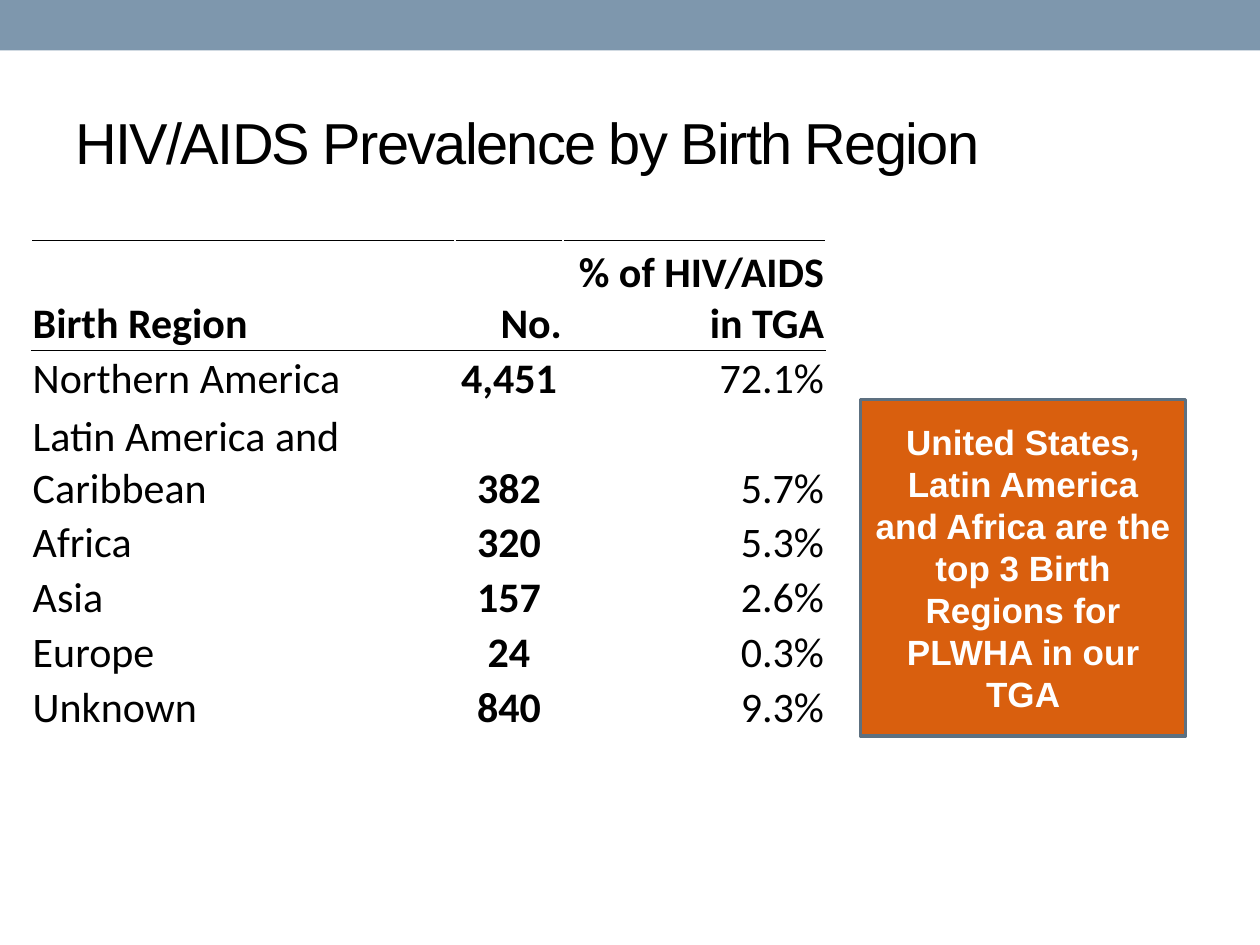
from dataclasses import dataclass

from lxml.etree import SubElement
from pptx import Presentation
from pptx.dml.color import RGBColor
from pptx.enum.shapes import MSO_SHAPE as Shape
from pptx.enum.text import MSO_ANCHOR as Anchor, MSO_AUTO_SIZE as AutoSize, PP_ALIGN as Align
from pptx.oxml.ns import qn
from pptx.util import Inches, Pt

COLORS = {"band": "7E97AD", "text": "000000", "callout": "D95F0E",
          "callout_line": "5D7080", "callout_text": "FFFFFF"}
COL_WIDTHS = (3.36, 0.86, 2.08)
LINE_HEIGHT = 0.435
SPACER_HEIGHT = 0.33


@dataclass
class Row:
    region: str
    count: str
    share: str
    lines: int = 1
    header: bool = False


ROWS = [
    Row("Birth Region", "No.", "% of HIV/AIDS in TGA", 2, True),
    Row("Northern America", "4,451", "72.1%"),
    Row("Latin America and Caribbean", "382", "5.7%", 2),
    Row("Africa", "320", "5.3%"),
    Row("Asia", "157", "2.6%"),
    Row("Europe", "24", "0.3%"),
    Row("Unknown", "840", "9.3%"),
]


def color(name: str) -> RGBColor:
    return RGBColor.from_string(COLORS[name])


def style(p, font: str, size: float, name: str, bold: bool, align) -> None:
    p.alignment = align
    p.font.name, p.font.size, p.font.bold = font, Pt(size), bold
    p.font.color.rgb = color(name)


def add_box(slide, left: float, top: float, width: float, height: float, fill: str):
    sp = slide.shapes.add_shape(Shape.RECTANGLE, *map(Inches, (left, top, width, height)))
    sp.shadow.inherit = False
    sp.fill.solid()
    sp.fill.fore_color.rgb = color(fill)
    return sp


def add_border(cell, side: str) -> None:
    ln = SubElement(cell._tc.get_or_add_tcPr(), qn(f"a:{side}"), w=str(Pt(0.5)))
    SubElement(SubElement(ln, qn("a:solidFill")), qn("a:srgbClr"), val=COLORS["text"])


def fill_cell(cell, text: str, col: int, header: bool) -> None:
    cell.vertical_anchor = Anchor.BOTTOM
    cell.margin_left = cell.margin_right = cell.margin_top = Inches(0.01)
    cell.margin_bottom = 0
    p = cell.text_frame.paragraphs[0]
    p.text = text
    align = (Align.LEFT, Align.RIGHT if header else Align.CENTER, Align.RIGHT)[col]
    style(p, "Calibri", 24, "text", header or col == 1, align)


def add_region_table(slide, left: float, top: float) -> None:
    heights = [row.lines * LINE_HEIGHT for row in ROWS] + [SPACER_HEIGHT]
    table = slide.shapes.add_table(
        len(heights), len(COL_WIDTHS), Inches(left), Inches(top),
        Inches(sum(COL_WIDTHS)), Inches(sum(heights))).table
    table.first_row = table.horz_banding = False
    for column, width in zip(table.columns, COL_WIDTHS):
        column.width = Inches(width)
    for line, height in zip(table.rows, heights):
        line.height = Inches(height)
    for i, row in enumerate(ROWS):
        for j, text in enumerate((row.region, row.count, row.share)):
            cell = table.cell(i, j)
            fill_cell(cell, text, j, row.header)
            if i < 2:
                add_border(cell, "lnT")
            if row.header:
                add_border(cell, "lnB")
    last = len(ROWS)
    table.cell(last, 0).merge(table.cell(last, len(COL_WIDTHS) - 1))
    table.cell(last, 0).text_frame.paragraphs[0].font.size = Pt(12)
    for cell in table.iter_cells():
        cell.fill.background()


def add_title(slide, text: str) -> None:
    sp = slide.shapes.title
    sp.left, sp.top, sp.width, sp.height = map(Inches, (0.5, 0.58, 9.25, 1.08))
    tf = sp.text_frame
    tf.auto_size = AutoSize.NONE
    tf.vertical_anchor = Anchor.MIDDLE
    p = tf.paragraphs[0]
    r = p.add_run()
    r.text = text
    r._r.get_or_add_rPr().set("spc", "-100")
    style(p, "Arial", 33, "text", False, Align.LEFT)


def add_callout(slide, text: str) -> None:
    sp = add_box(slide, 6.83, 3.17, 2.58, 2.67, "callout")
    sp.line.color.rgb = color("callout_line")
    sp.line.width = Pt(2.08)
    tf = sp.text_frame
    tf.word_wrap = True
    tf.vertical_anchor = Anchor.MIDDLE
    p = tf.paragraphs[0]
    p.text = text
    style(p, "Arial", 20, "callout_text", True, Align.CENTER)


def main() -> None:
    prs = Presentation()
    prs.slide_width, prs.slide_height = Inches(10), Inches(7.5)
    s = prs.slides.add_slide(prs.slide_layouts[5])
    add_box(s, 0, 0, 10, 0.4, "band").line.fill.background()
    add_title(s, "HIV/AIDS Prevalence by Birth Region")
    add_region_table(s, 0.25, 1.91)
    add_callout(s, "United States, Latin America and Africa are the top 3 "
                   "Birth Regions for PLWHA in our TGA")
    prs.save("out.pptx")


if __name__ == "__main__":
    main()
